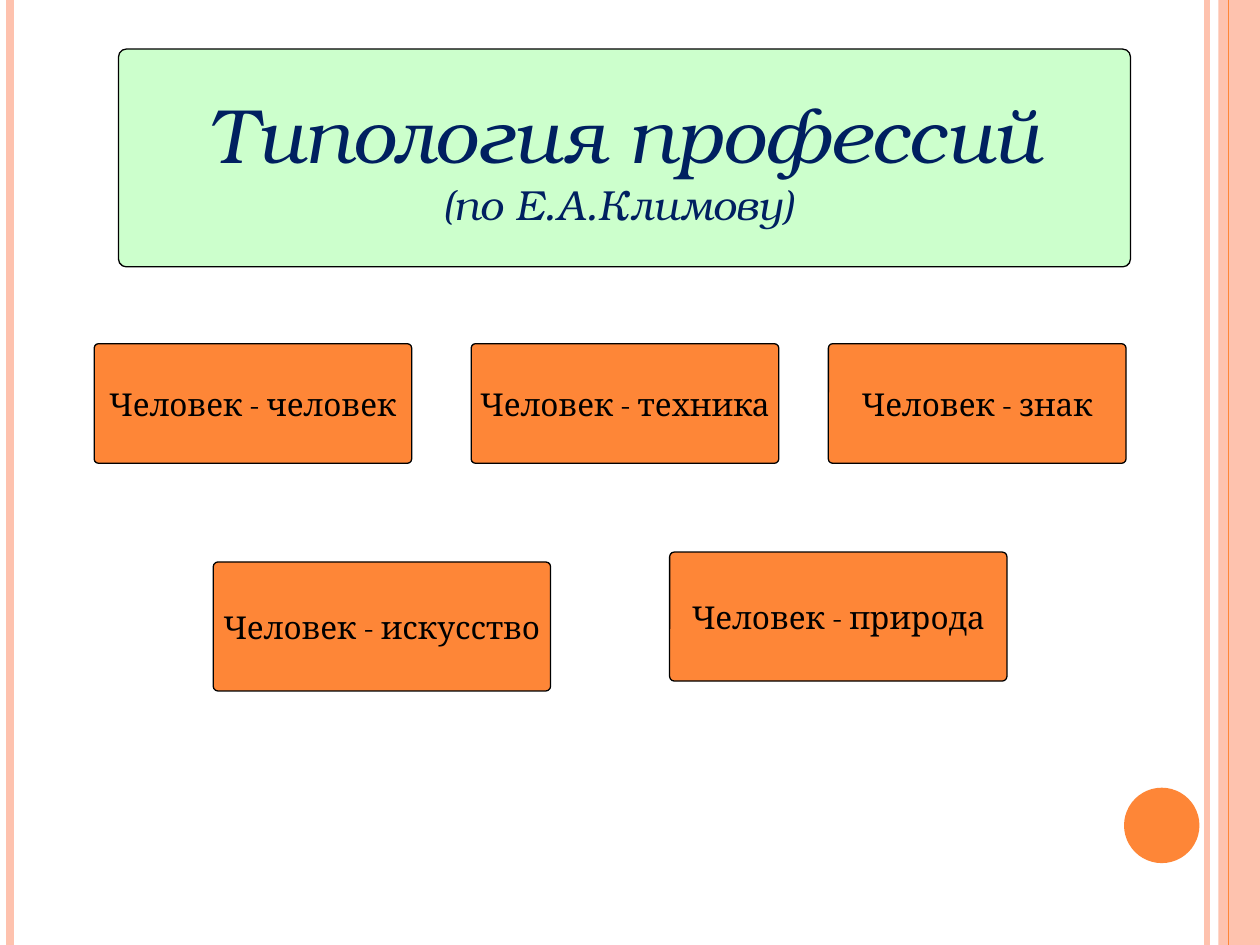
from lxml.etree import SubElement
from pptx import Presentation
from pptx.dml.color import RGBColor
from pptx.enum.shapes import MSO_CONNECTOR, MSO_SHAPE
from pptx.enum.text import MSO_ANCHOR, PP_ALIGN
from pptx.oxml.ns import qn
from pptx.util import Cm, Pt

WIDTH, HEIGHT = 25.4, 19.05
ORANGE, PEACH, GREEN, NAVY, BLACK = "FE8637", "FEC2AE", "CCFFCC", "002060", "000000"


def color(hex_value):
    return RGBColor.from_string(hex_value)


class TypologySlide:
    """Holds the visual style and the slide being drawn."""

    def __init__(self, slide):
        self.slide = slide
        self.corner = 0.036
        self.outline = Pt(0.75)

    def stripe(self, x, stroke, weight):
        line = self.slide.shapes.add_connector(
            MSO_CONNECTOR.STRAIGHT, Cm(x), Cm(0), Cm(x), Cm(HEIGHT))
        line.line.color.rgb = color(stroke)
        line.line.width = Pt(weight)
        SubElement(line._element.spPr, qn("a:effectLst"))

    def figure(self, kind, box, fill):
        shape = self.slide.shapes.add_shape(kind, *map(Cm, box))
        shape.shadow.inherit = False
        shape.fill.solid()
        shape.fill.fore_color.rgb = color(fill)
        shape.line.fill.background()
        return shape

    def card(self, box, fill, text, sizes, font, ink, italic=False):
        card = self.figure(MSO_SHAPE.ROUNDED_RECTANGLE, box, fill)
        card.adjustments[0] = self.corner
        card.line.color.rgb = color(BLACK)
        card.line.width = self.outline
        frame = card.text_frame
        frame.text = text
        frame.word_wrap = False
        frame.vertical_anchor = MSO_ANCHOR.MIDDLE
        for paragraph, size in zip(frame.paragraphs, sizes):
            paragraph.alignment = PP_ALIGN.CENTER
            for run in paragraph.runs:
                run.font.name = font
                run.font.size = Pt(size)
                run.font.italic = italic
                run.font.color.rgb = color(ink)


def main():
    deck = Presentation()
    deck.slide_width, deck.slide_height = Cm(WIDTH), Cm(HEIGHT)
    typology = TypologySlide(deck.slides.add_slide(deck.slide_layouts[6]))

    typology.stripe(24.33, PEACH, 3)
    typology.stripe(0.2, PEACH, 4.5)
    typology.figure(MSO_SHAPE.RECTANGLE, (24.56, 0, WIDTH - 24.56, HEIGHT), PEACH)
    typology.stripe(24.77, ORANGE, 0.75)
    typology.figure(MSO_SHAPE.OVAL, (22.66, 15.88, 1.52, 1.52), ORANGE)

    typology.card((2.39, 0.99, 20.4, 4.39), GREEN,
                  "Типология профессий\n(по Е.А.Климову) ",
                  (44, 24), "TeX Gyre Bonum", NAVY, italic=True)

    professions = [
        ("человек", (1.9, 6.93, 6.4, 2.41)),
        ("техника", (9.5, 6.93, 6.2, 2.41)),
        ("знак", (16.7, 6.93, 6, 2.41)),
        ("искусство", (4.3, 11.33, 6.8, 2.6)),
        ("природа", (13.5, 11.13, 6.8, 2.6)),
    ]
    for subject, box in professions:
        typology.card(box, ORANGE, f"Человек - {subject}", (18,), "Cambria", BLACK)

    deck.save("out.pptx")


if __name__ == "__main__":
    main()
